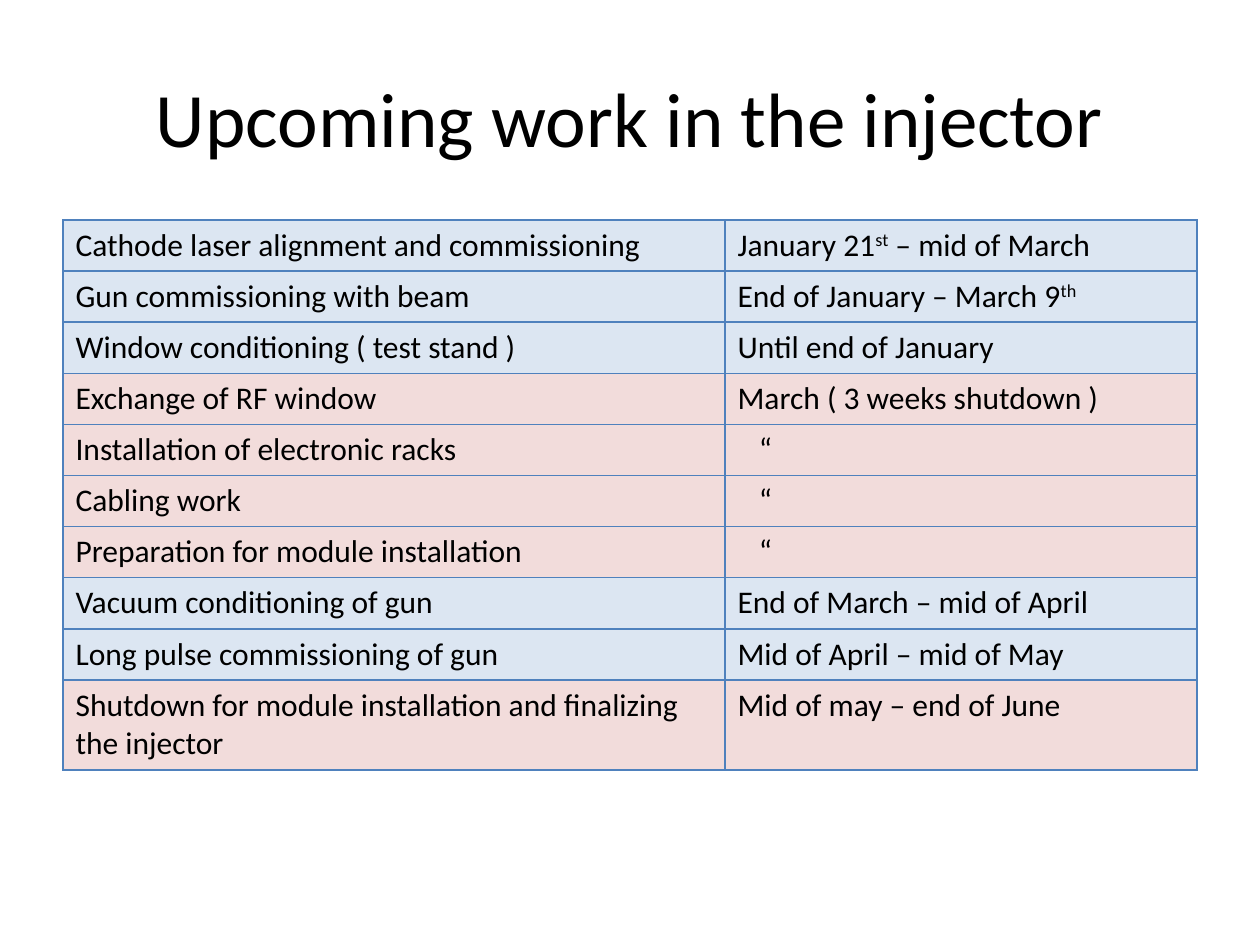
from lxml import etree
from pptx import Presentation
from pptx.dml.color import RGBColor
from pptx.enum.text import MSO_ANCHOR, PP_ALIGN
from pptx.oxml.ns import qn
from pptx.util import Pt

CENTER = PP_ALIGN.CENTER
MIDDLE = MSO_ANCHOR.MIDDLE
PX = 914400 / 126
COLORS = {"text": "000000", "border": "4F81BD", "run": "DCE6F2", "shutdown": "F2DCDB"}
DITTO = "“"


def px(n):
    return round(n * PX)


def add_text(p, text, size=18, color="text", sup=False):
    r = p.add_run()
    r.text = text
    r.font.name = "Calibri"
    r.font.size = Pt(size)
    r.font.color.rgb = RGBColor.from_string(COLORS[color])
    if sup:
        r._r.get_or_add_rPr().set("baseline", "30000")


prs = Presentation()
prs.slide_width, prs.slide_height = px(1260), px(945)
s = prs.slides.add_slide(prs.slide_layouts[5])

title = s.shapes.title
title.left, title.top, title.width, title.height = px(63), px(38), px(1134), px(157)
title.text_frame.vertical_anchor = MIDDLE
p = title.text_frame.paragraphs[0]
p.alignment = CENTER
add_text(p, "Upcoming work in the injector", size=44)

schedule = [
    ("run", "Cathode laser alignment and commissioning", ["January 21", "st", " – mid of March"]),
    ("run", "Gun commissioning with beam", ["End of January – March 9", "th"]),
    ("run", "Window conditioning ( test stand )", ["Until end of January"]),
    ("shutdown", "Exchange of RF window", ["March ( 3 weeks shutdown )"]),
    ("shutdown", "Installation of electronic racks", [DITTO]),
    ("shutdown", "Cabling work", [DITTO]),
    ("shutdown", "Preparation for module installation", [DITTO]),
    ("run", "Vacuum conditioning of gun", ["End of March – mid of April"]),
    ("run", "Long pulse commissioning of gun", ["Mid of April – mid of May"]),
    ("shutdown", "Shutdown for module installation and finalizing the injector",
     ["Mid of may – end of June"]),
]

heights = [51] * (len(schedule) - 1) + [90]
frame = s.shapes.add_table(len(schedule), 2, px(63), px(220), px(1134), px(sum(heights)))
table = frame.table
table.first_row = False
table.horz_banding = False
for col, width in zip(table.columns, (662, 472)):
    col.width = px(width)

for i, (kind, task, period) in enumerate(schedule):
    table.rows[i].height = px(heights[i])
    for j, parts in enumerate(([task], period)):
        cell = table.cell(i, j)
        tcPr = cell._tc.get_or_add_tcPr()
        for side in ("lnL", "lnR", "lnT", "lnB"):
            ln = etree.SubElement(tcPr, qn(f"a:{side}"), w=str(Pt(1)))
            fill = etree.SubElement(ln, qn("a:solidFill"))
            etree.SubElement(fill, qn("a:srgbClr"), val=COLORS["border"])
        cell.fill.solid()
        cell.fill.fore_color.rgb = RGBColor.from_string(COLORS[kind])
        if parts == [DITTO]:
            cell.margin_left = px(34)
        p = cell.text_frame.paragraphs[0]
        for text in parts:
            add_text(p, text, sup=text in ("st", "th"))

prs.save("out.pptx")
